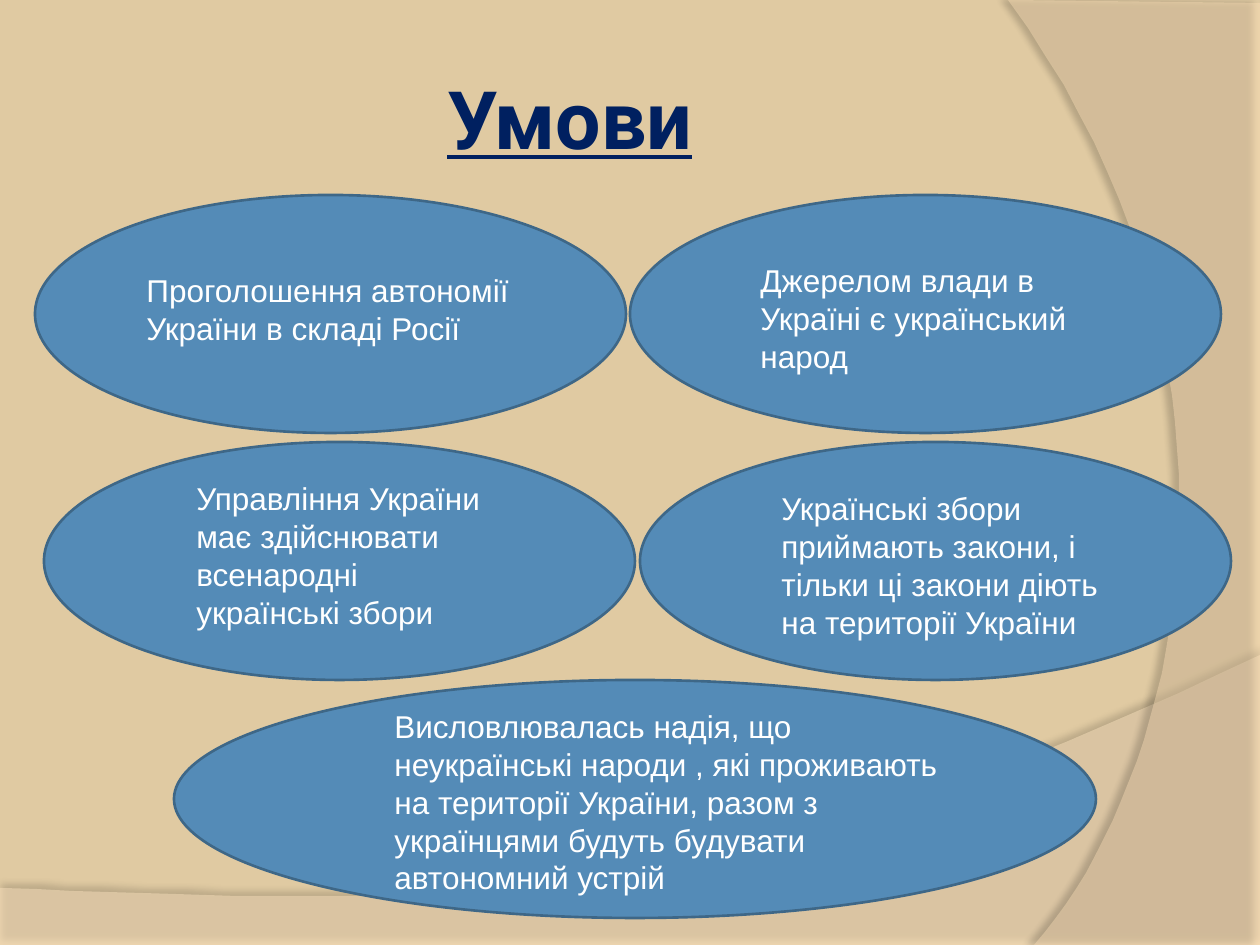
"""Build the slide of five conditions set in ellipses."""
from dataclasses import dataclass

from lxml import etree
from pptx import Presentation
from pptx import util as u
from pptx.dml.color import RGBColor
from pptx.enum import shapes, text
from pptx.oxml.ns import qn

SCALE = u.Inches(1) / 126


@dataclass(frozen=True)
class Theme:
    """Colours, fonts and type sizes of the slide."""
    back: str = "E0CAA2"
    floor: str = "FFE5C2"
    side: str = "FFE2B9"
    shadow: str = "000000"
    title: str = "002060"
    oval: str = "548BB7"
    edge: str = "3E6787"
    label: str = "FFFFFF"
    title_font: str = "Roboto"
    label_font: str = "Arial"
    title_size: int = 46
    label_size: int = 18


T = Theme()
OVAL_W, OVAL_H = 591, 238
CONDITIONS = [
    ((35, 195, OVAL_W), (134, 265, 407, 89),
     "Проголошення автономії України в складі Росії"),
    ((630, 195, OVAL_W), (748, 255, 387, 127),
     "Джерелом влади в Україні є український народ"),
    ((44, 442, OVAL_W), (184, 473, 328, 165),
     "Управління України має здійснювати всенародні українські збори"),
    ((640, 442, OVAL_W), (769, 483, 348, 165),
     "Українські збори приймають закони, і тільки ці закони діють "
     "на території України"),
    ((174, 680, 922), (382, 701, 586, 204),
     "Висловлювалась надія, що неукраїнські народи , які проживають "
     "на території України, разом з українцями будуть будувати "
     "автономний устрій"),
]


def px(*values):
    """Turn pixel lengths into EMU."""
    return [u.Emu(round(v * SCALE)) for v in values]


def rgb(code):
    """Return a colour from its hex code."""
    return RGBColor.from_string(code)


def curve(a, b, c, d, steps=40):
    """Return points along a cubic Bezier curve."""
    points = []
    for i in range(steps + 1):
        t = i / steps
        weights = ((1 - t) ** 3, 3 * t * (1 - t) ** 2,
                   3 * t * t * (1 - t), t ** 3)
        points.append(tuple(sum(w * p[k] for w, p in zip(weights, (a, b, c, d)))
                            for k in (0, 1)))
    return points


def set_alpha(color, percent):
    """Make a colour element partly transparent."""
    etree.SubElement(color, qn("a:alpha"), val=str(percent * 1000))


def add_band(s, points, color, alpha, shade, dist, angle):
    """Add a translucent background band with a soft shadow."""
    builder = s.shapes.build_freeform(*points[0], scale=SCALE)
    builder.add_line_segments(points[1:], close=True)
    sp = builder.convert_to_shape()
    sp.fill.solid()
    sp.fill.fore_color.rgb = rgb(color)
    sp.line.fill.background()
    sp.shadow.inherit = False
    props = sp.fill.fore_color._xFill
    set_alpha(props.find(qn("a:srgbClr")), alpha)
    effects = sp._element.spPr.find(qn("a:effectLst"))
    outer = etree.SubElement(
        effects, qn("a:outerShdw"), blurRad=str(u.Pt(4)), dist=str(u.Pt(dist)),
        dir=str(angle * 60000), algn="ctr", rotWithShape="0")
    set_alpha(etree.SubElement(outer, qn("a:srgbClr"), val=T.shadow), shade)


def set_title(s, words):
    """Place and format the title."""
    sp = s.shapes.title
    sp.left, sp.top, sp.width, sp.height = px(63, 38, 1029, 158)
    tf = sp.text_frame
    tf.text = words
    tf.vertical_anchor = text.MSO_ANCHOR.MIDDLE
    tf.margin_left = tf.margin_right = u.Inches(0.05)
    p = tf.paragraphs[0]
    p.alignment = text.PP_ALIGN.LEFT
    p._p.get_or_add_pPr().set("marL", str(u.Inches(3)))
    font = p.runs[0].font
    font.name, font.size = T.title_font, u.Pt(T.title_size)
    font.bold = font.underline = True
    font.color.rgb = rgb(T.title)


def add_oval(s, left, top, width):
    """Add one ellipse."""
    sp = s.shapes.add_shape(shapes.MSO_SHAPE.OVAL,
                            *px(left, top, width, OVAL_H))
    sp.shadow.inherit = False
    sp.fill.solid()
    sp.fill.fore_color.rgb = rgb(T.oval)
    sp.line.color.rgb = rgb(T.edge)
    sp.line.width = u.Pt(1.5)


def add_label(s, box, words):
    """Add the wording of one condition."""
    tf = s.shapes.add_textbox(*px(*box)).text_frame
    tf.word_wrap = True
    tf.auto_size = text.MSO_AUTO_SIZE.SHAPE_TO_FIT_TEXT
    tf.text = words
    font = tf.paragraphs[0].runs[0].font
    font.name, font.size = T.label_font, u.Pt(T.label_size)
    font.color.rgb = rgb(T.label)


def main():
    """Build and save the slide."""
    prs = Presentation()
    prs.slide_width, prs.slide_height = px(1260, 945)
    s = prs.slides.add_slide(prs.slide_layouts[5])
    s.background.fill.solid()
    s.background.fill.fore_color.rgb = rgb(T.back)
    floor = curve((1260, 655), (704, 919), (493, 906), (0, 888))
    side = curve((1034, 945), (1178, 780), (1283, 378), (1008, 0))
    add_band(s, [(0, 945), (1260, 945)] + floor, T.floor, 45, 35, 3.5, 270)
    add_band(s, [(1260, 3), (1260, 945)] + side, T.side, 40, 45, 4, 180)
    set_title(s, "Умови")
    for oval, _, _ in CONDITIONS:
        add_oval(s, *oval)
    for _, box, words in CONDITIONS:
        add_label(s, box, words)
    prs.save("out.pptx")


if __name__ == "__main__":
    main()
